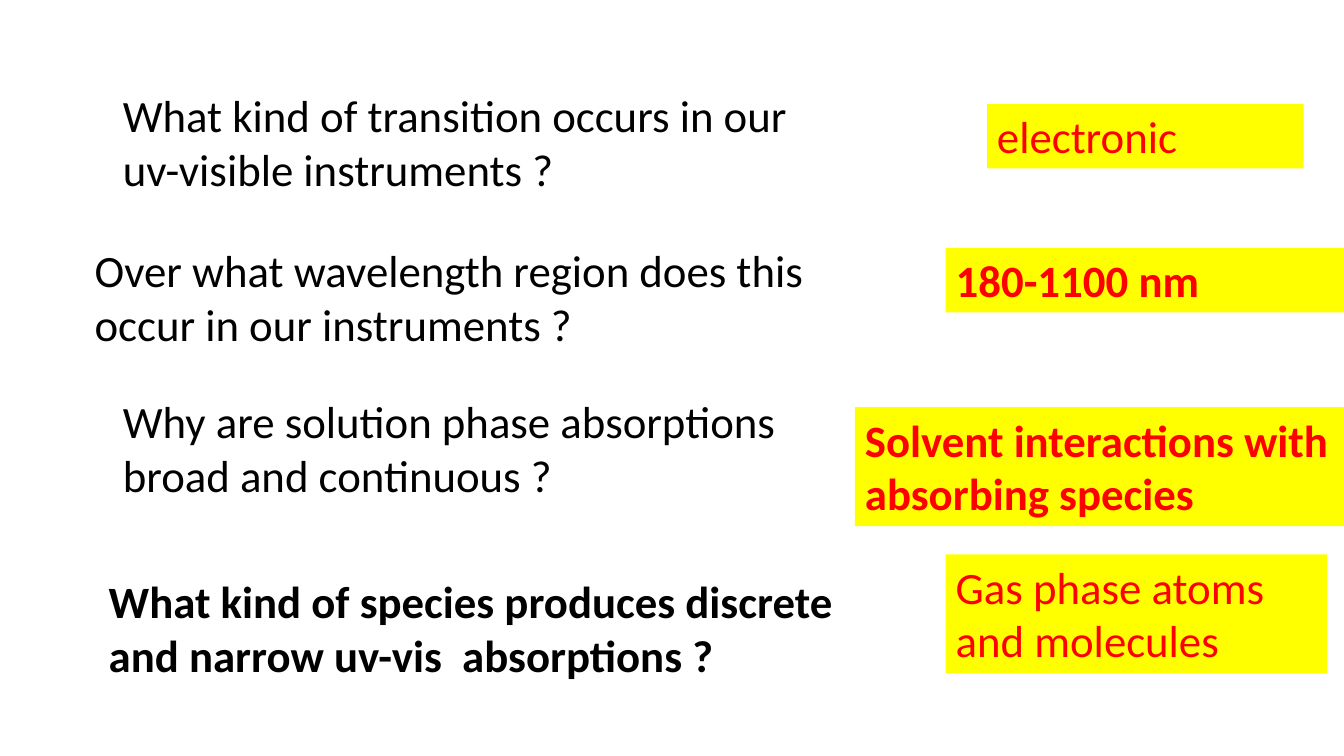
from dataclasses import dataclass

from pptx import Presentation
from pptx.dml.color import RGBColor as Color
from pptx.enum.text import MSO_AUTO_SIZE as Fit
from pptx.util import Inches, Pt


@dataclass(frozen=True)
class Theme:
    font: str = "Calibri"
    size: int = 32
    ask: str = "000000"
    reply: str = "FF0000"
    mark: str = "FFFF00"


THEME = Theme()
ONE, TWO = 0.64, 1.18

ASKS = [
    ("What kind of transition occurs in our uv-visible instruments ?", 1.12, 0.82, 7.36, False),
    ("Over what wavelength region does this occur in our instruments ?", 0.84, 2.36, 7.64, False),
    ("Why are solution phase absorptions broad and continuous ?", 1.12, 3.86, 7.36, False),
    ("What kind of species produces discrete and narrow uv-vis  absorptions ?", 0.98, 5.64, 7.74, True),
]
REPLIES = [
    ("electronic", 9.79, 1.03, 3.14, ONE, False),
    ("180-1100 nm", 9.38, 2.46, 3.95, ONE, True),
    ("Solvent interactions with absorbing species", 8.48, 4.04, 4.85, TWO, True),
    ("Gas phase atoms and molecules", 9.38, 5.5, 3.78, TWO, False),
]


def add_text(slide, text, left, top, width, height, bold, color):
    box = slide.shapes.add_textbox(Inches(left), Inches(top), Inches(width), Inches(height))
    frame = box.text_frame
    frame.word_wrap = True
    frame.auto_size = Fit.SHAPE_TO_FIT_TEXT
    frame.text = text
    font = frame.paragraphs[0].font
    font.name = THEME.font
    font.size = Pt(THEME.size)
    font.bold = bold
    font.color.rgb = Color.from_string(color)
    return box


def add_ask(slide, text, left, top, width, bold):
    add_text(slide, text, left, top, width, TWO, bold, THEME.ask)


def add_reply(slide, text, left, top, width, height, bold):
    box = add_text(slide, text, left, top, width, height, bold, THEME.reply)
    box.fill.solid()
    box.fill.fore_color.rgb = Color.from_string(THEME.mark)


def main():
    deck = Presentation()
    deck.slide_width = Inches(13.33)
    deck.slide_height = Inches(7.5)
    slide = deck.slides.add_slide(deck.slide_layouts[6])
    for ask, reply in zip(ASKS, REPLIES):
        add_ask(slide, *ask)
        add_reply(slide, *reply)
    deck.save("out.pptx")


if __name__ == "__main__":
    main()
